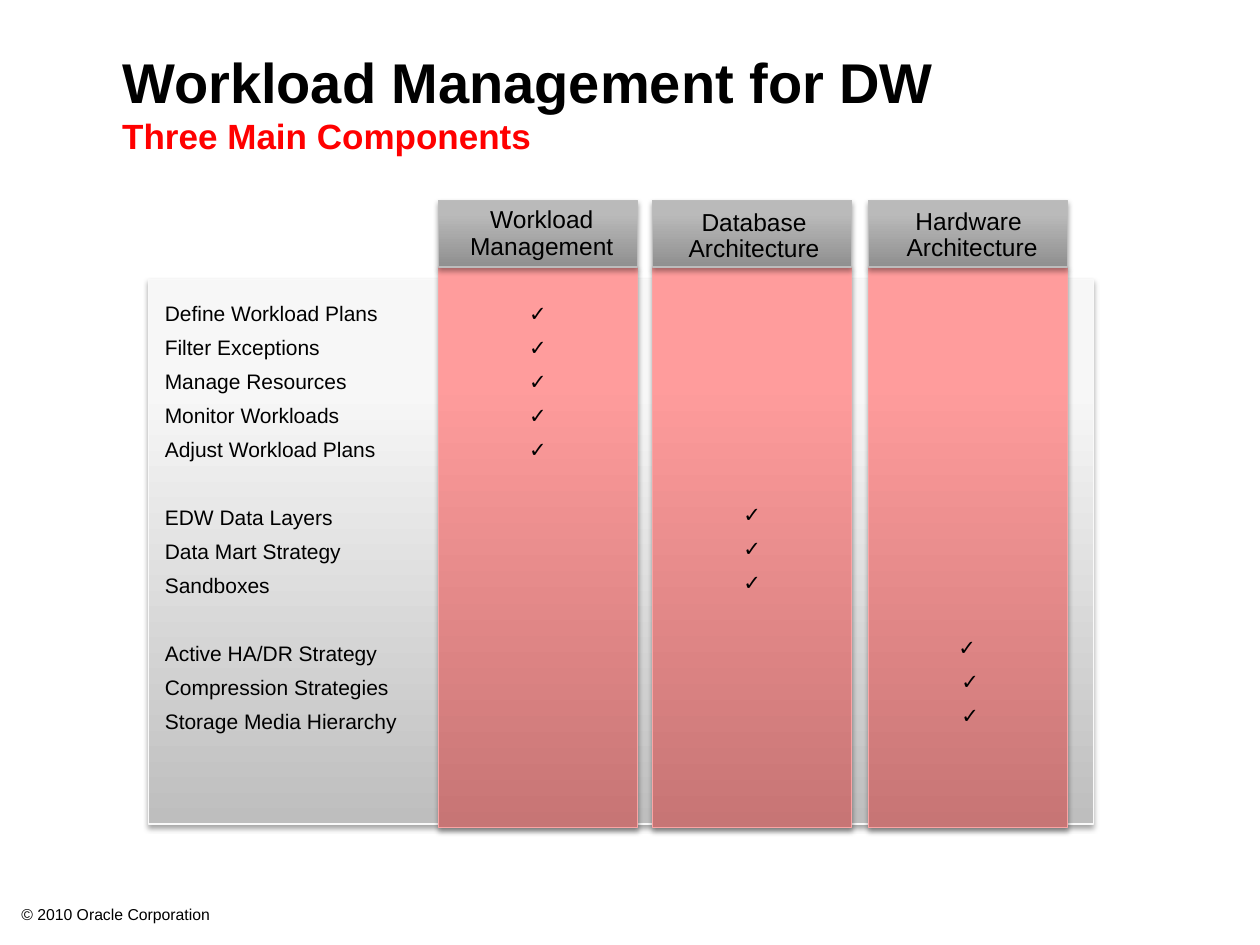
from dataclasses import dataclass

from lxml import etree
from pptx import Presentation
from pptx.dml.color import RGBColor
from pptx.enum import shapes, text
from pptx.oxml import ns
from pptx.util import Inches, Pt


@dataclass(frozen=True)
class Finish:
    stops: tuple[str, str, str]  # colours at 0, 80 and 100 %, bottom to top
    line: str


@dataclass(frozen=True)
class Theme:
    font: str = "Arial"
    ink: str = "000000"
    accent: str = "FF0000"
    title_size: int = 32
    subtitle_size: int = 20
    header_size: int = 14
    body_size: int = 12
    footer_size: int = 9
    panel: Finish = Finish(("BEBEBE", "F7F7F7", "F8F8F8"), "F9F9F9")
    column: Finish = Finish(("C77575", "FF9C9C", "FF9E9E"), "FAA4A4")
    header: Finish = Finish(("8F8F8F", "BABABA", "BBBBBB"), "BCBCBC")


@dataclass(frozen=True)
class Area:
    left: float
    top: float
    width: float
    height: float

    def lengths(self) -> list[int]:
        return [Inches(v) for v in (self.left, self.top, self.width, self.height)]


@dataclass(frozen=True)
class Component:
    left: float
    header: str
    header_area: Area
    check_left: float
    tasks: tuple[str, ...]
    checks: tuple[str, ...]


THEME = Theme()
COLUMN_WIDTH = 1.58
HEADER_TOP, HEADER_HEIGHT = 1.59, 0.53
COLUMN_TOP, COLUMN_HEIGHT = 2.12, 4.45
LIST_TOP, LIST_HEIGHT = 2.36, 3.98
ROW_PITCH = 0.265
ROW_GAP, GROUP_GAP = 6.5, 25.9  # points before a task, and before a new group

COMPONENTS = (
    Component(3.48, "Workload\vManagement", Area(3.63, 1.6, 1.34, 0.53), 3.6,
              ("Define Workload Plans", "Filter Exceptions", "Manage Resources",
               "Monitor Workloads", "Adjust Workload Plans"), ("✓",) * 5),
    Component(5.18, "Database\vArchitecture", Area(5.36, 1.62, 1.25, 0.53), 5.3,
              ("EDW Data Layers", "Data Mart Strategy", "Sandboxes"), ("✓",) * 3),
    Component(6.89, "Hardware \vArchitecture", Area(7.09, 1.61, 1.25, 0.53), 7.03,
              ("Active HA/DR Strategy", "Compression Strategies",
               "Storage Media Hierarchy"), ("✓ ", "✓", "✓")),
)


def add_block(page, area: Area, finish: Finish) -> None:
    """Draw a rectangle with a vertical gradient and a soft shadow."""
    block = page.shapes.add_shape(shapes.MSO_SHAPE.RECTANGLE, *area.lengths())
    block.line.color.rgb = RGBColor.from_string(finish.line)
    block.line.width = Pt(0.75)
    block.fill.gradient()
    block.fill.gradient_angle = 90
    properties = block._element.spPr
    stop_list = properties.find(".//" + ns.qn("a:gsLst"))
    for old_stop in list(stop_list):
        stop_list.remove(old_stop)
    for position, color in zip((0, 80, 100), finish.stops):
        stop = etree.SubElement(stop_list, ns.qn("a:gs"), pos=str(position * 1000))
        etree.SubElement(stop, ns.qn("a:srgbClr"), val=color)
    block.shadow.inherit = False
    shadow = etree.SubElement(
        properties.find(ns.qn("a:effectLst")), ns.qn("a:outerShdw"),
        blurRad=str(Pt(3.1)), dist=str(Pt(1.8)), dir="5400000", rotWithShape="0")
    shade = etree.SubElement(shadow, ns.qn("a:srgbClr"), val="000000")
    etree.SubElement(shade, ns.qn("a:alpha"), val="35000")


def format_span(span, size: int, color: str = THEME.ink, bold: bool = False) -> None:
    span.font.name = THEME.font
    span.font.size = Pt(size)
    span.font.bold = bold
    span.font.color.rgb = RGBColor.from_string(color)


def add_text(page, area: Area, words: str, size: int, align=text.PP_ALIGN.LEFT,
             wrap: bool = True, spacing: float = 1.0):
    """Add a text box with one paragraph for each line of words."""
    box = page.shapes.add_textbox(*area.lengths())
    frame = box.text_frame
    frame.word_wrap = wrap
    frame.text = words
    for index, para in enumerate(frame.paragraphs):
        para.alignment = align
        para.line_spacing = spacing
        if index:
            para.space_before = Pt(ROW_GAP)
        for span in para.runs:
            format_span(span, size)
    return frame


def clear_margins(frame) -> None:
    frame.margin_left = frame.margin_top = frame.margin_right = frame.margin_bottom = 0


def main() -> None:
    deck = Presentation()
    deck.slide_width, deck.slide_height = Inches(10), Inches(7.5)
    page = deck.slides.add_slide(deck.slide_layouts[6])

    # Back panel
    add_block(page, Area(1.18, 2.22, 7.5, 4.32), THEME.panel)

    # Title and footer
    title = add_text(page, Area(0.97, 0.33, 8.29, 1.03),
                     "Workload Management for DW\vThree Main Components", THEME.title_size)
    clear_margins(title)
    title.margin_top = Inches(0.05)
    heading, subtitle = title.paragraphs[0].runs
    format_span(heading, THEME.title_size, bold=True)
    format_span(subtitle, THEME.subtitle_size, THEME.accent, bold=True)
    footer = add_text(page, Area(0.17, 7.17, 9.67, 0.17),
                      "© 2010 Oracle Corporation", THEME.footer_size)
    clear_margins(footer)
    footer.vertical_anchor = text.MSO_ANCHOR.MIDDLE

    # Columns, then the headers over them
    for top, height, finish in ((COLUMN_TOP, COLUMN_HEIGHT, THEME.column),
                                (HEADER_TOP, HEADER_HEIGHT, THEME.header)):
        for component in COMPONENTS:
            add_block(page, Area(component.left, top, COLUMN_WIDTH, height), finish)
    for component in COMPONENTS:
        add_text(page, component.header_area, component.header, THEME.header_size,
                 text.PP_ALIGN.CENTER, wrap=False, spacing=0.9)

    # Task list, with a wider gap where a new component starts
    tasks = [task for component in COMPONENTS for task in component.tasks]
    labels = add_text(page, Area(1.21, LIST_TOP, 2.2, LIST_HEIGHT), "\n".join(tasks),
                      THEME.body_size, spacing=0.9)
    for component in COMPONENTS[1:]:
        first = tasks.index(component.tasks[0])
        labels.paragraphs[first].space_before = Pt(GROUP_GAP)

    # Check marks beside each component's tasks
    row = 0
    for component in COMPONENTS:
        offset = row * ROW_PITCH
        add_text(page, Area(component.check_left, LIST_TOP + offset, 1.34,
                            LIST_HEIGHT - offset),
                 "\n".join(component.checks), THEME.body_size,
                 text.PP_ALIGN.CENTER, spacing=0.9)
        row += len(component.tasks) + 1

    deck.save("out.pptx")


if __name__ == "__main__":
    main()
